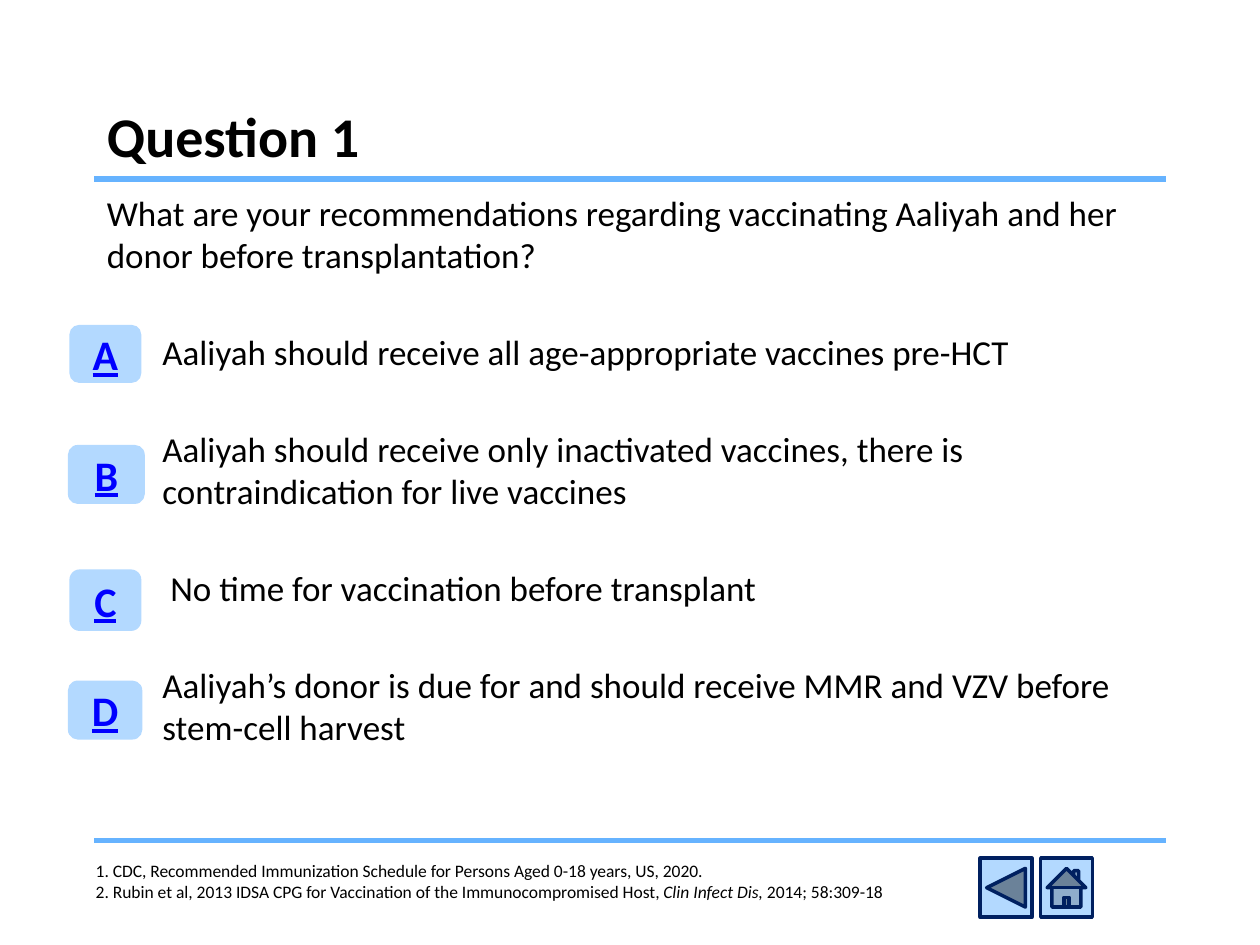
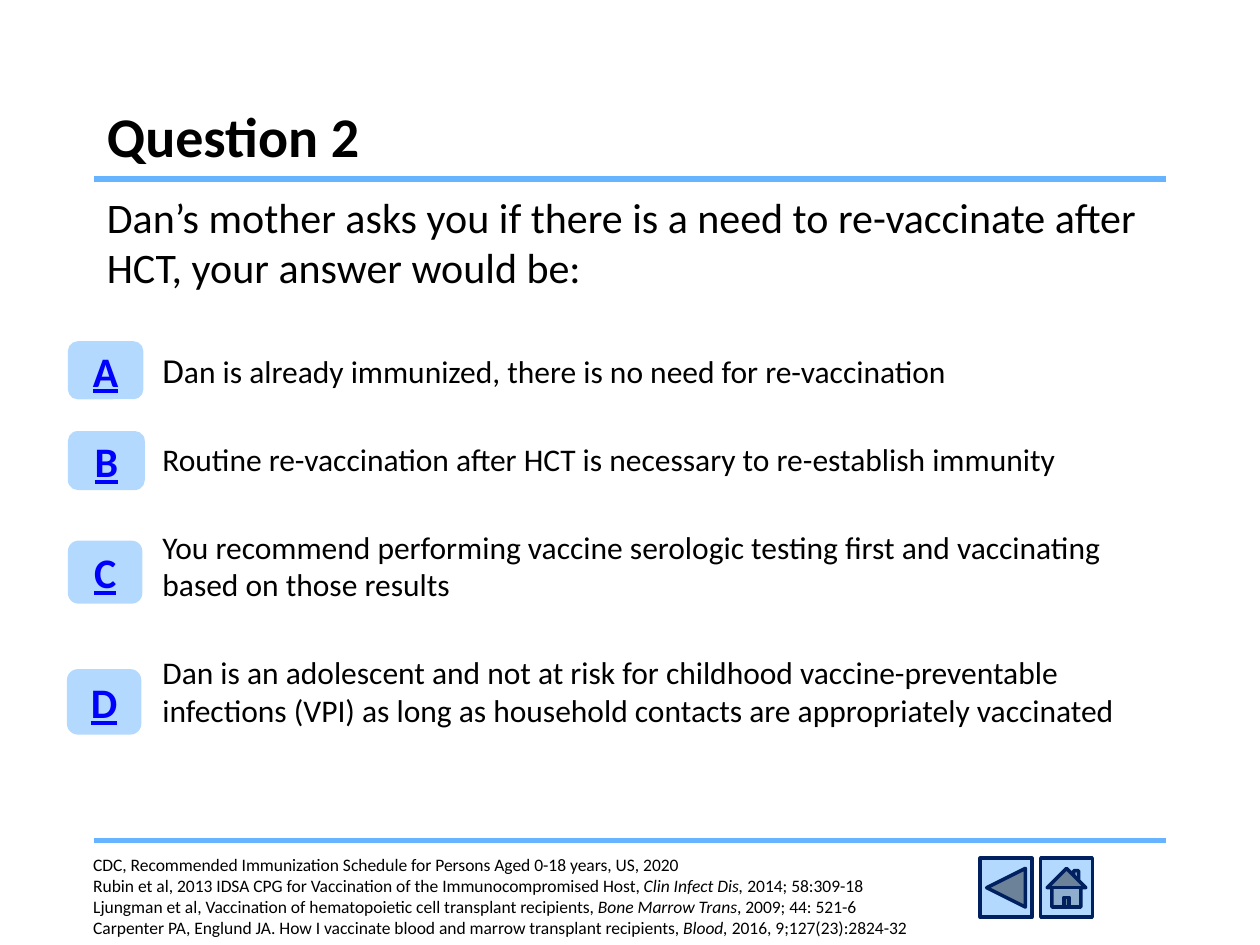
from dataclasses import dataclass

from lxml.etree import SubElement
from pptx import Presentation
from pptx.dml.color import RGBColor
from pptx.enum.shapes import MSO_CONNECTOR, MSO_SHAPE
from pptx.enum.text import MSO_ANCHOR, MSO_AUTO_SIZE, PP_ALIGN
from pptx.oxml.ns import qn
from pptx.shapes.autoshape import Shape
from pptx.slide import Slide
from pptx.text.text import TextFrame, _Paragraph
from pptx.util import Cm, Pt

FONT = "Calibri"
COLORS = {
    "text": "000000",
    "rule": "66B3FF",
    "button": "B3D9FF",
    "outline": "002060",
    "link": "0000FF",
}
LEFT, WIDTH = 1.9, 21.6
RULE_TOPS = (3.61, 16.94)
OPTION_INDENT = 1.12


@dataclass(frozen=True)
class Area:
    left: float
    top: float
    width: float
    height: float

    def lengths(self) -> tuple[Cm, Cm, Cm, Cm]:
        return Cm(self.left), Cm(self.top), Cm(self.width), Cm(self.height)


@dataclass(frozen=True)
class Span:
    text: str
    size: float
    italic: bool = False


@dataclass(frozen=True)
class Option:
    letter: str
    key: Area
    spans: tuple[Span, ...]
    space_before: float


@dataclass(frozen=True)
class Question:
    title: str
    prompt: Span
    options: tuple[Option, ...]
    sources_area: Area
    sources: tuple[tuple[Span, ...], ...]


TITLE_AREA = Area(LEFT, 0.99, WIDTH, 2.54)
BODY_AREA = Area(LEFT, 3.73, WIDTH, 12.7)
BACK_BUTTON = Area(19.76, 17.3, 1.04, 1.19)
HOME_BUTTON = Area(20.98, 17.3, 1.04, 1.19)


def source(before: str, journal: str = "", after: str = "") -> tuple[Span, ...]:
    """Reference line with the journal name in italics."""
    spans = (Span(before, 10), Span(journal, 10, True), Span(after, 10))
    return tuple(span for span in spans if span.text)


GUIDELINE = "Rubin et al, 2013 IDSA CPG for Vaccination of the Immunocompromised Host, "

QUESTIONS = (
    Question(
        "Question 1",
        Span("What are your recommendations regarding vaccinating Aaliyah and her "
             "donor before transplantation?", 20),
        (
            Option("A", Area(1.4, 6.55, 1.45, 1.17), (
                Span("Aaliyah should receive all age-appropriate vaccines pre-HCT", 20),), 31.5),
            Option("B", Area(1.37, 8.97, 1.55, 1.19), (
                Span("Aaliyah should receive only inactivated vaccines, there is "
                     "contraindication for live vaccines", 20),), 31.5),
            Option("C", Area(1.4, 11.48, 1.45, 1.24), (
                Span(" No time for vaccination before transplant", 20),), 31.5),
            Option("D", Area(1.37, 13.72, 1.5, 1.19), (
                Span("Aaliyah’s donor is due for and should receive MMR and VZV before "
                     "stem-cell harvest", 20),), 31.5),
        ),
        Area(1.68, 17.22, 17.3, 1.12),
        (
            source("1. CDC, Recommended Immunization Schedule for Persons Aged 0-18 years, "
                   "US, 2020."),
            source("2. " + GUIDELINE, "Clin Infect Dis, ", "2014; 58:309-18"),
        ),
    ),
    Question(
        "Question 2",
        Span("Dan’s mother asks you if there is a need to re-vaccinate after HCT, "
             "your answer would be:", 24),
        (
            Option("A", Area(1.37, 6.88, 1.52, 1.17), (
                Span("D", 20),
                Span("an is already immunized, there is no need for re-vaccination", 18)), 32),
            Option("B", Area(1.37, 8.69, 1.55, 1.19), (
                Span("Routine re-vaccination after HCT is necessary to re-establish "
                     "immunity", 18),), 28.5),
            Option("C", Area(1.37, 10.9, 1.5, 1.27), (
                Span("You recommend performing vaccine serologic testing first and "
                     "vaccinating based on those results", 18),), 28.5),
            Option("D", Area(1.35, 13.49, 1.5, 1.32), (
                Span("Dan is an adolescent and not at risk for childhood vaccine-preventable "
                     "infections (VPI) as long as household contacts are appropriately "
                     "vaccinated", 18),), 28.5),
        ),
        Area(1.63, 17.09, 18.97, 1.96),
        (
            source("CDC, Recommended Immunization Schedule for Persons Aged 0-18 years, "
                   "US, 2020"),
            source(GUIDELINE, "Clin Infect Dis, ", "2014; 58:309-18"),
            source("Ljungman et al, Vaccination of hematopoietic cell transplant recipients,",
                   " Bone Marrow Trans", ", 2009; 44: 521-6"),
            source("Carpenter PA, Englund JA. How I vaccinate blood and marrow transplant "
                   "recipients,", " Blood, ", "2016, 9;127(23):2824-32"),
        ),
    ),
)


def color(name: str) -> RGBColor:
    return RGBColor.from_string(COLORS[name])


def add_text(para: _Paragraph, text: str, *, size: float, fill: str = "text",
             bold: bool = False, italic: bool = False, underline: bool = False) -> None:
    run = para.add_run()
    run.text = text
    font = run.font
    font.name, font.size = FONT, Pt(size)
    font.bold, font.italic, font.underline = bold, italic, underline
    font.color.rgb = color(fill)


def add_spans(para: _Paragraph, spans: tuple[Span, ...]) -> None:
    for span in spans:
        add_text(para, span.text, size=span.size, italic=span.italic)


def next_paragraph(frame: TextFrame) -> _Paragraph:
    """First paragraph while it is unused, otherwise a new one."""
    first = frame.paragraphs[0]
    return frame.add_paragraph() if first.runs else first


def place(shape: Shape, area: Area) -> None:
    shape.left, shape.top, shape.width, shape.height = area.lengths()


def set_unbulleted(para: _Paragraph, *, indent: float, space_before: float) -> None:
    para.alignment = PP_ALIGN.LEFT
    para.space_before = Pt(space_before)
    properties = para._p.get_or_add_pPr()
    properties.set("marL", str(Cm(indent)))
    properties.set("indent", "0")
    SubElement(properties, qn("a:buNone"))


def add_rule(slide: Slide, top: float) -> None:
    rule = slide.shapes.add_connector(
        MSO_CONNECTOR.STRAIGHT, Cm(LEFT), Cm(top), Cm(LEFT + WIDTH), Cm(top))
    rule.line.color.rgb = color("rule")
    rule.line.width = Pt(3)
    SubElement(rule._element.spPr, qn("a:effectLst"))


def add_button(slide: Slide, kind: MSO_SHAPE, area: Area) -> Shape:
    button = slide.shapes.add_shape(kind, *area.lengths())
    button.shadow.inherit = False
    button.fill.solid()
    button.fill.fore_color.rgb = color("button")
    button.line.fill.background()
    return button


def add_navigation_button(slide: Slide, kind: MSO_SHAPE, area: Area, rotation: float = 0) -> None:
    button = add_button(slide, kind, area)
    button.rotation = rotation
    button.line.color.rgb = color("outline")
    button.line.width = Pt(2)


def add_frame(slide: Slide) -> None:
    """Rules and navigation buttons that every question shares."""
    for top in RULE_TOPS:
        add_rule(slide, top)
    add_navigation_button(slide, MSO_SHAPE.ACTION_BUTTON_FORWARD_OR_NEXT, BACK_BUTTON, 180)
    add_navigation_button(slide, MSO_SHAPE.ACTION_BUTTON_HOME, HOME_BUTTON)


def fill_title(slide: Slide, text: str) -> None:
    title = slide.shapes.title
    place(title, TITLE_AREA)
    frame = title.text_frame
    frame.auto_size = MSO_AUTO_SIZE.NONE
    frame.vertical_anchor = MSO_ANCHOR.BOTTOM
    para = frame.paragraphs[0]
    para.alignment = PP_ALIGN.LEFT
    add_text(para, text, size=32, bold=True)


def fill_body(slide: Slide, question: Question) -> None:
    body = slide.placeholders[1]
    place(body, BODY_AREA)
    frame = body.text_frame
    frame.auto_size = MSO_AUTO_SIZE.NONE
    prompt = next_paragraph(frame)
    set_unbulleted(prompt, indent=0, space_before=0)
    add_spans(prompt, (question.prompt,))
    for option in question.options:
        para = next_paragraph(frame)
        para.level = 1
        set_unbulleted(para, indent=OPTION_INDENT, space_before=option.space_before)
        add_spans(para, option.spans)


def add_option_key(slide: Slide, option: Option) -> None:
    key = add_button(slide, MSO_SHAPE.ROUNDED_RECTANGLE, option.key)
    frame = key.text_frame
    frame.word_wrap = False
    frame.vertical_anchor = MSO_ANCHOR.MIDDLE
    para = frame.paragraphs[0]
    para.alignment = PP_ALIGN.CENTER
    add_text(para, option.letter, size=24, fill="link", bold=True, underline=True)


def add_sources(slide: Slide, question: Question) -> None:
    box = slide.shapes.add_textbox(*question.sources_area.lengths())
    frame = box.text_frame
    frame.word_wrap = True
    for spans in question.sources:
        add_spans(next_paragraph(frame), spans)


def main() -> None:
    deck = Presentation()
    deck.slide_width, deck.slide_height = Cm(25.4), Cm(19.05)
    for question in QUESTIONS:
        page = deck.slides.add_slide(deck.slide_layouts[1])
        add_frame(page)
        fill_title(page, question.title)
        fill_body(page, question)
        for option in question.options:
            add_option_key(page, option)
        add_sources(page, question)
    deck.save("out.pptx")


if __name__ == "__main__":
    main()
